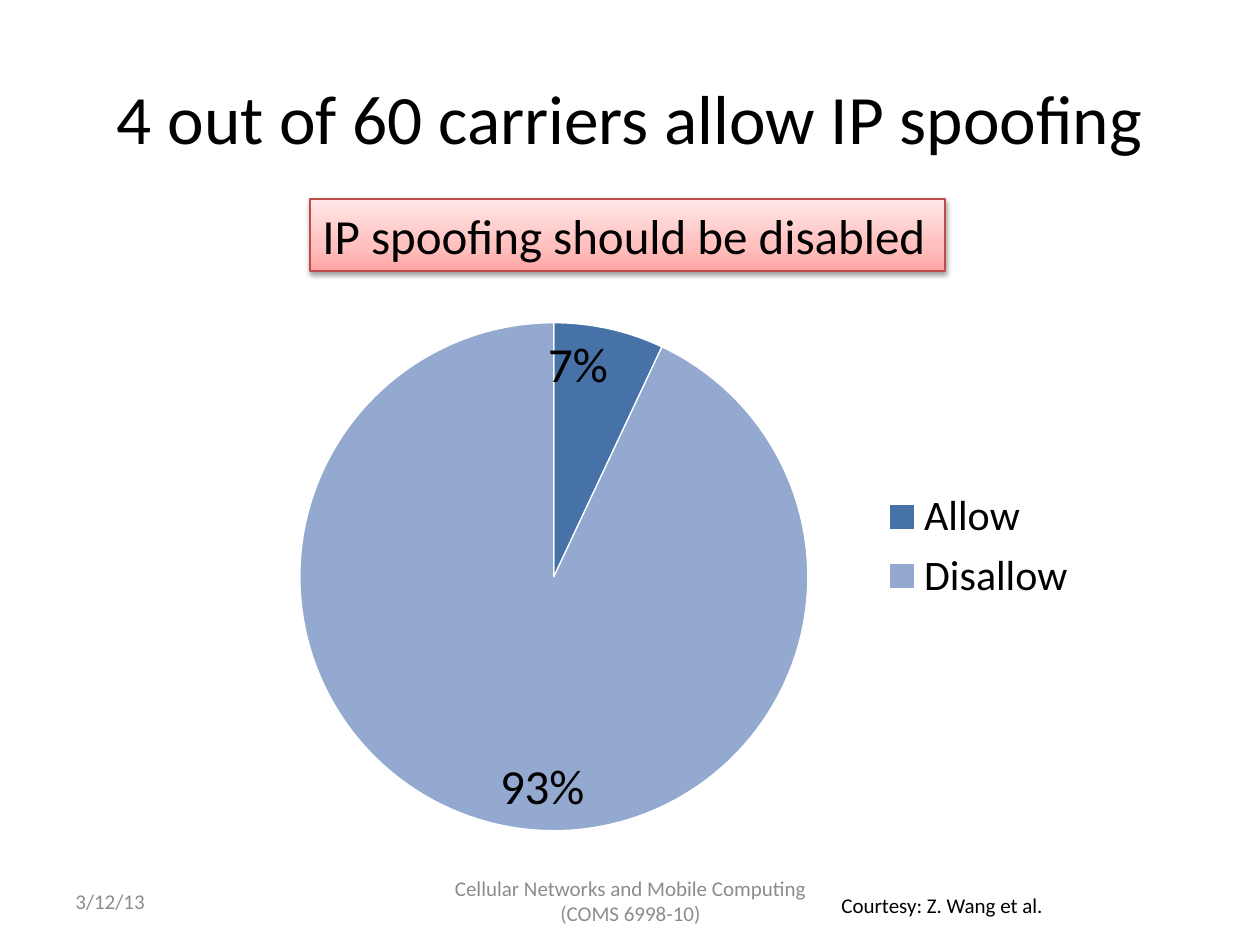
from copy import deepcopy
from lxml import etree
from pptx import Presentation
from pptx.chart.data import CategoryChartData
from pptx.dml.color import RGBColor
from pptx.enum.chart import XL_CHART_TYPE, XL_LABEL_POSITION, XL_LEGEND_POSITION
from pptx.enum.shapes import MSO_SHAPE
from pptx.enum.text import MSO_ANCHOR, PP_ALIGN
from pptx.oxml import parse_xml
from pptx.oxml.ns import nsdecls, qn
from pptx.util import Pt

PX = 914400 / 126  # EMU per px
FONT = "Calibri"
rgb = RGBColor.from_string


def add_text(text, x, y, w, h, size, color="000000", align=PP_ALIGN.LEFT,
             anchor=MSO_ANCHOR.TOP, wrap=True, shape=None):
    box = [round(v * PX) for v in (x, y, w, h)]
    if shape is None:
        sp = s.shapes.add_textbox(*box)
    else:
        sp = s.shapes.add_shape(shape, *box)
    tf = sp.text_frame
    tf.word_wrap = wrap
    tf.vertical_anchor = anchor
    p = tf.paragraphs[0]
    p.alignment = align
    r = p.add_run()
    r.text = text
    r.font.name, r.font.size = FONT, Pt(size)
    r.font.color.rgb = rgb(color)
    return sp


prs = Presentation()
prs.slide_width, prs.slide_height = round(1260 * PX), round(945 * PX)
s = prs.slides.add_slide(prs.slide_layouts[6])

# Title and footer
add_text("4 out of 60 carriers allow IP spoofing", 63, 38, 1134, 158, 39.6,
         align=PP_ALIGN.CENTER, anchor=MSO_ANCHOR.MIDDLE)
add_text("Cellular Networks and Mobile Computing (COMS 6998-10)", 431, 876, 399, 50, 12,
         color="8C8C8C", align=PP_ALIGN.CENTER, anchor=MSO_ANCHOR.MIDDLE)

# Pie chart
data = CategoryChartData()
data.categories = ["Allow", "Disallow"]
data.add_series("Series 1", (7, 93))
box = [round(v * PX) for v in (231, 243, 861, 607)]
chart = s.shapes.add_chart(XL_CHART_TYPE.PIE, *box, data).chart
chart.has_title = False
chart.font.name, chart.font.size = FONT, Pt(18)
chart.font.color.rgb = rgb("000000")
chart.has_legend = True
chart.legend.position = XL_LEGEND_POSITION.RIGHT
chart.legend.include_in_layout = False
chart.legend.font.size = Pt(24)

plot = chart.plots[0]
plot.vary_by_categories = True
for i, color in enumerate(("4672A8", "93A9CF")):
    fmt = plot.series[0].points[i].format
    fmt.fill.solid()
    fmt.fill.fore_color.rgb = rgb(color)
    fmt.line.color.rgb = rgb("FFFFFF")
    fmt.line.width = Pt(0.75)
plot.has_data_labels = True
labels = plot.data_labels
labels.show_percentage, labels.show_value = True, False
labels.number_format, labels.number_format_is_linked = "0%", False
labels.position = XL_LABEL_POSITION.INSIDE_END
labels.font.size = Pt(28)

# Fixed place for the pie inside the chart
area = chart.element.find(".//" + qn("c:plotArea"))
for old in area.findall(qn("c:layout")):
    area.remove(old)
layout = parse_xml(f"<c:layout {nsdecls('c')}><c:manualLayout/></c:layout>")
for tag, val in (("layoutTarget", "inner"), ("xMode", "edge"), ("yMode", "edge"),
                 ("x", 0.08), ("y", 0.13), ("w", 0.59), ("h", 0.84)):
    etree.SubElement(layout[0], qn("c:" + tag)).set("val", str(val))
area.insert(0, layout)

# Callout with gradient and soft shadow
sp = add_text("IP spoofing should be disabled", 310, 199, 635, 72, 28,
              wrap=False, shape=MSO_SHAPE.RECTANGLE)
sp.fill.gradient()
sp.fill.gradient_angle = 90
stops = sp.element.spPr.find(".//" + qn("a:gsLst"))
stops.append(deepcopy(stops[-1]))
for stop, (pos, color) in zip(sp.fill.gradient_stops,
                              ((0, "FFA6A5"), (0.35, "FFC0BF"), (1, "FFE7E7"))):
    stop.position = pos
    stop.color.rgb = rgb(color)
sp.line.color.rgb = rgb("BF4C48")
sp.line.width = Pt(0.75)
sp.shadow.inherit = False
sp.element.spPr.find(qn("a:effectLst")).append(parse_xml(
    f'<a:outerShdw {nsdecls("a")} blurRad="40000" dist="20000" dir="5400000" rotWithShape="0">'
    '<a:srgbClr val="000000"><a:alpha val="38000"/></a:srgbClr></a:outerShdw>'))

# Credit and date
add_text("Courtesy: Z. Wang et al.", 829, 886, 231, 38, 12, wrap=False)
add_text("3/12/13", 63, 876, 294, 50, 12, color="8C8C8C", anchor=MSO_ANCHOR.MIDDLE)

prs.save("out.pptx")
